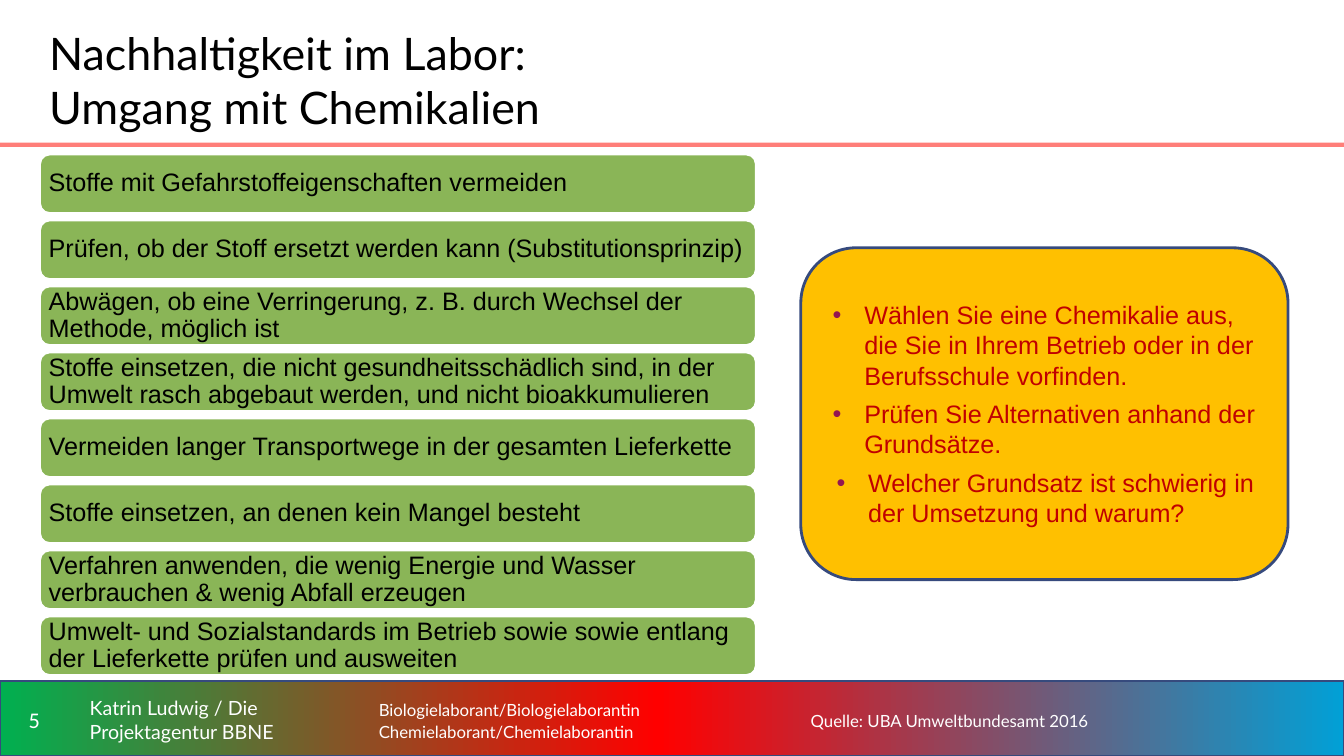
from copy import deepcopy

from lxml import etree
from pptx import Presentation
from pptx.dml.color import RGBColor
from pptx.enum import shapes, text
from pptx.oxml import ns
from pptx.util import Pt

WHITE = RGBColor(0xFF, 0xFF, 0xFF)
BLACK = RGBColor(0x00, 0x00, 0x00)
GREEN = RGBColor(0x4E, 0x8F, 0x00)
AMBER = RGBColor(0xFF, 0xC0, 0x00)
DARK_RED = RGBColor(0xC0, 0x00, 0x00)
NAVY = RGBColor(0x36, 0x4A, 0x7D)
SALMON = RGBColor(0xFF, 0x7E, 0x79)
BULLET_HEX = "941651"
FOOTER_STOPS = [(0, "00B050"), (49, "FF0000"), (100, "01A0D6")]

PRINCIPLES = [
    "Stoffe mit Gefahrstoffeigenschaften vermeiden",
    "Prüfen, ob der Stoff ersetzt werden kann (Substitutionsprinzip)",
    "Abwägen, ob eine Verringerung, z. B. durch Wechsel der Methode, möglich ist",
    "Stoffe einsetzen, die nicht gesundheitsschädlich sind, in der Umwelt rasch "
    "abgebaut werden, und nicht bioakkumulieren",
    "Vermeiden langer Transportwege in der gesamten Lieferkette",
    "Stoffe einsetzen, an denen kein Mangel besteht",
    "Verfahren anwenden, die wenig Energie und Wasser verbrauchen & wenig Abfall erzeugen",
    "Umwelt- und Sozialstandards im Betrieb sowie sowie entlang der Lieferkette "
    "prüfen und ausweiten",
]
# Wording, left margin, space before, space after
TASKS = [
    ("Wählen Sie eine Chemikalie aus, die Sie in Ihrem Betrieb oder in der "
     "Berufsschule vorfinden.", 33.75, 0, 0),
    ("Prüfen Sie Alternativen anhand der Grundsätze.", 33.75, 6, 0),
    ("Welcher Grundsatz ist schwierig in der Umsetzung und warum?", 36.5, 6, 3),
]


def add_box(slide, kind, box, line=None, line_width=1):
    shape = slide.shapes.add_shape(kind, *map(Pt, box))
    shape.shadow.inherit = False
    if line is None:
        shape.line.fill.background()
    else:
        shape.line.color.rgb = line
        shape.line.width = Pt(line_width)
    return shape


def prepare_frame(shape, inset_x, inset_y):
    frame = shape.text_frame
    frame.word_wrap = True
    frame.vertical_anchor = text.MSO_ANCHOR.MIDDLE
    frame.margin_left = frame.margin_right = Pt(inset_x)
    frame.margin_top = frame.margin_bottom = Pt(inset_y)
    return frame


def add_run(paragraph, wording, size, font_name, color):
    run = paragraph.add_run()
    run.text = wording
    run.font.size = Pt(size)
    run.font.name = font_name
    run.font.color.rgb = color


def add_label(slide, box, lines, size, font_name="Lato", color=WHITE,
              align=text.PP_ALIGN.LEFT, spacing=1.0):
    label = slide.shapes.add_textbox(*map(Pt, box))
    frame = prepare_frame(label, 7.2, 3.6)
    for i, line in enumerate(lines):
        paragraph = frame.add_paragraph() if i else frame.paragraphs[0]
        paragraph.alignment = align
        paragraph.line_spacing = spacing
        add_run(paragraph, line, size, font_name, color)


def add_header(slide, left, top, width, height):
    # Two-line title
    title = slide.shapes.add_textbox(Pt(left + 28), Pt(top + 14.4), Pt(708), Pt(85))
    paragraph = prepare_frame(title, 7.2, 3.6).paragraphs[0]
    add_run(paragraph, "Nachhaltigkeit im Labor:", 32, "Lato", BLACK)
    paragraph.add_line_break()
    add_run(paragraph, "Umgang mit Chemikalien", 32, "Lato", BLACK)
    # Rule along the bottom edge
    rule = add_box(slide, shapes.MSO_SHAPE.RECTANGLE, (left, top + height - 3, width, 3))
    rule.fill.solid()
    rule.fill.fore_color.rgb = SALMON


def add_principles(slide, left, top, width, height):
    bar_height = 42.5
    pitch = (height - bar_height) / (len(PRINCIPLES) - 1)
    for i, principle in enumerate(PRINCIPLES):
        bar = add_box(slide, shapes.MSO_SHAPE.ROUNDED_RECTANGLE,
                      (left, top + i * pitch, width, bar_height), WHITE, 2)
        bar.fill.solid()
        bar.fill.fore_color.rgb = GREEN
        # Opacity of the green
        green = bar.fill._xPr.find(".//" + ns.qn("a:srgbClr"))
        etree.SubElement(green, ns.qn("a:alpha"), val="66000")
        paragraph = prepare_frame(bar, 4.4, 4.4).paragraphs[0]
        paragraph.alignment = text.PP_ALIGN.LEFT
        paragraph.line_spacing = 0.9
        add_run(paragraph, principle, 18, "Arial", BLACK)


def add_bullet(paragraph, margin, hanging):
    properties = paragraph._p.get_or_add_pPr()
    properties.set("marL", str(Pt(margin)))
    properties.set("indent", str(-Pt(hanging)))
    bullet_color = etree.SubElement(properties, ns.qn("a:buClr"))
    etree.SubElement(bullet_color, ns.qn("a:srgbClr"), val=BULLET_HEX)
    etree.SubElement(properties, ns.qn("a:buFont"), typeface="Arial")
    etree.SubElement(properties, ns.qn("a:buChar"), char="•")


def add_tasks(slide, *box):
    card = add_box(slide, shapes.MSO_SHAPE.ROUNDED_RECTANGLE, box, NAVY, 2)
    card.fill.solid()
    card.fill.fore_color.rgb = AMBER
    frame = prepare_frame(card, 0, 0)
    for i, (task, margin, before, after) in enumerate(TASKS):
        paragraph = frame.add_paragraph() if i else frame.paragraphs[0]
        add_bullet(paragraph, margin, 22.5)
        paragraph.alignment = text.PP_ALIGN.LEFT
        paragraph.space_before = Pt(before)
        paragraph.space_after = Pt(after)
        add_run(paragraph, task, 18, "Arial", DARK_RED)


def add_footer(slide, left, top, width, height):
    band = add_box(slide, shapes.MSO_SHAPE.RECTANGLE, (left, top, width, height), NAVY)
    # Three-colour gradient from left to right
    band.fill.gradient()
    band.fill.gradient_angle = 0
    stop_list = band.fill._xPr.find(".//" + ns.qn("a:gsLst"))
    stop_list.insert(1, deepcopy(stop_list[0]))
    for stop, (position, color_hex) in zip(band.fill.gradient_stops, FOOTER_STOPS):
        stop.position = position / 100
        stop.color.rgb = RGBColor.from_string(color_hex)
    # Page number, author, professions, reference
    label_top, label_height = top + 5.7, 44
    add_label(slide, (left, label_top, 49, label_height), ["5"], 16, "Calibri",
              align=text.PP_ALIGN.CENTER)
    add_label(slide, (left + 57, label_top, 200, label_height),
              ["Katrin Ludwig / Die Projektagentur BBNE"], 14)
    add_label(slide, (left + 263.5, label_top, 302, label_height),
              ["Biologielaborant/Biologielaborantin", "Chemielaborant/Chemielaborantin"],
              12, spacing=1.1)
    add_label(slide, (left + 572, label_top, 364, label_height),
              ["Quelle: UBA Umweltbundesamt 2016"], 12, spacing=1.1)


def main():
    presentation = Presentation()
    presentation.slide_width = Pt(960)
    presentation.slide_height = Pt(540)
    slide = presentation.slides.add_slide(presentation.slide_layouts[6])
    add_footer(slide, 0, 486.5, 960, 53.5)
    add_header(slide, 0, 0, 960, 105)
    add_tasks(slide, 572, 177, 348, 237)
    add_principles(slide, 28.3, 110, 512, 372.5)
    presentation.save("out.pptx")


if __name__ == "__main__":
    main()
